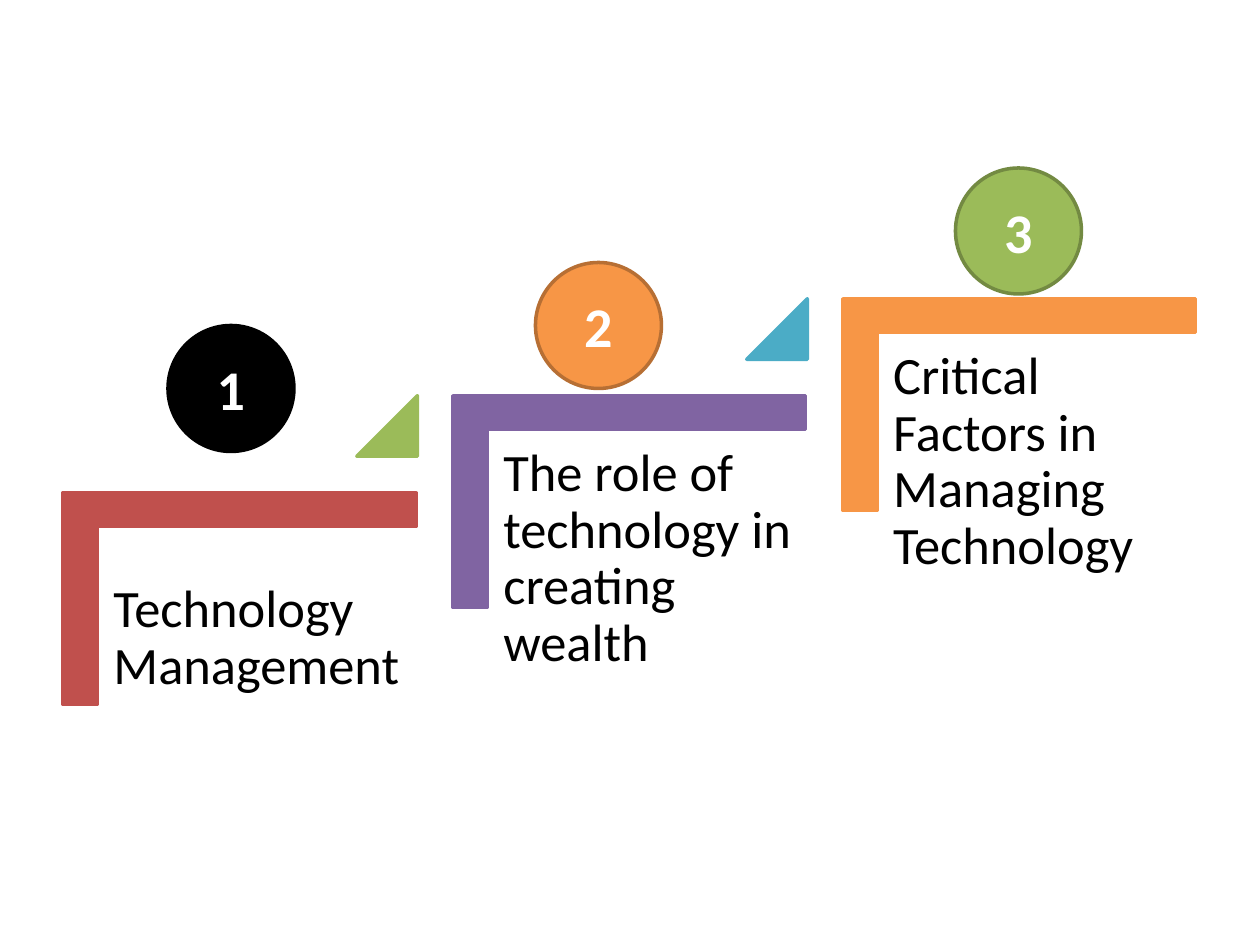
from typing import NamedTuple, Optional

from pptx import Presentation
from pptx.dml.color import RGBColor
from pptx.enum.shapes import MSO_SHAPE as Preset
from pptx.enum.text import MSO_ANCHOR as Anchor, PP_ALIGN as Align
from pptx.util import Pt

COLORS = {
    "red": "C0504D",
    "purple": "8064A2",
    "orange": "F79646",
    "dark orange": "B76F34",
    "green": "9BBB59",
    "dark green": "738A42",
    "teal": "4BACC6",
    "black": "000000",
    "white": "FFFFFF",
}
FONT = "Calibri"
STEP_RUN, STEP_RISE = 222.8, 55.4
BRACKET_LEFT, BRACKET_TOP = 76.3, 241.2
BRACKET_WIDTH, BRACKET_HEIGHT = 121, 201.6
BRACKET_THICKNESS = 0.16
WEDGE_LEFT, WEDGE_TOP, WEDGE_SIZE = 203.9, 226.1, 34.6
LABEL_LEFT, LABEL_WIDTH, LABEL_INSET = 56.2, 182.2, 8.64
BADGE_SIZE = 72


class Step(NamedTuple):
    topic: str
    bracket: str
    wedge: Optional[str]
    label_top: float
    label_height: float
    badge_left: float
    badge_top: float
    badge_fill: str
    badge_line: str


STEPS = [
    Step("Technology Management", "red", "green",
         324, 113, 96, 186, "black", "black"),
    Step("The role of technology in creating wealth", "purple", "teal",
         246.3, 160, 306, 150, "orange", "dark orange"),
    Step("Critical Factors in Managing Technology", "orange", None,
         190.9, 160, 546, 96, "green", "dark green"),
]


def color(name: str) -> RGBColor:
    return RGBColor.from_string(COLORS[name])


def add_preset(slide, preset, left: float, top: float, width: float,
               height: float, fill: str, line: str):
    shape = slide.shapes.add_shape(preset, Pt(left), Pt(top), Pt(width), Pt(height))
    shape.shadow.inherit = False
    shape.fill.solid()
    shape.fill.fore_color.rgb = color(fill)
    shape.line.color.rgb = color(line)
    shape.line.width = Pt(2)
    return shape


def write(paragraph, text: str, size: float, ink: str, bold: bool = False) -> None:
    paragraph.text = text
    for run in paragraph.runs:
        run.font.name = FONT
        run.font.size = Pt(size)
        run.font.bold = bold
        run.font.color.rgb = color(ink)


def add_bracket(slide, step: Step, index: int) -> None:
    bracket = add_preset(slide, Preset.CORNER,
                         BRACKET_LEFT + index * STEP_RUN,
                         BRACKET_TOP - index * STEP_RISE,
                         BRACKET_WIDTH, BRACKET_HEIGHT, step.bracket, step.bracket)
    bracket.rotation = 90
    bracket.adjustments[0] = BRACKET_THICKNESS
    bracket.adjustments[1] = BRACKET_THICKNESS


def add_label(slide, step: Step, index: int) -> None:
    label = slide.shapes.add_textbox(Pt(LABEL_LEFT + index * STEP_RUN),
                                     Pt(step.label_top), Pt(LABEL_WIDTH),
                                     Pt(step.label_height))
    frame = label.text_frame
    frame.word_wrap = True
    frame.vertical_anchor = Anchor.TOP
    frame.margin_left = frame.margin_right = Pt(LABEL_INSET)
    frame.margin_top = frame.margin_bottom = Pt(LABEL_INSET)
    topic = frame.paragraphs[0]
    topic.line_spacing = 0.9
    write(topic, step.topic, 30, "black")


def add_wedge(slide, step: Step, index: int) -> None:
    wedge = add_preset(slide, Preset.ISOSCELES_TRIANGLE,
                       WEDGE_LEFT + index * STEP_RUN,
                       WEDGE_TOP - index * STEP_RISE,
                       WEDGE_SIZE, WEDGE_SIZE, step.wedge, step.wedge)
    wedge.adjustments[0] = 1


def add_badge(slide, step: Step, number: int) -> None:
    badge = add_preset(slide, Preset.OVAL, step.badge_left, step.badge_top,
                       BADGE_SIZE, BADGE_SIZE, step.badge_fill, step.badge_line)
    badge.text_frame.vertical_anchor = Anchor.MIDDLE
    numeral = badge.text_frame.paragraphs[0]
    numeral.alignment = Align.CENTER
    write(numeral, str(number), 32, "white", bold=True)


def main() -> None:
    deck = Presentation()
    deck.slide_width, deck.slide_height = Pt(720), Pt(540)
    slide = deck.slides.add_slide(deck.slide_layouts[6])
    for index, step in enumerate(STEPS):
        add_bracket(slide, step, index)
        add_label(slide, step, index)
        if step.wedge:
            add_wedge(slide, step, index)
    for number, step in enumerate(STEPS, start=1):
        add_badge(slide, step, number)
    deck.save("out.pptx")


if __name__ == "__main__":
    main()
